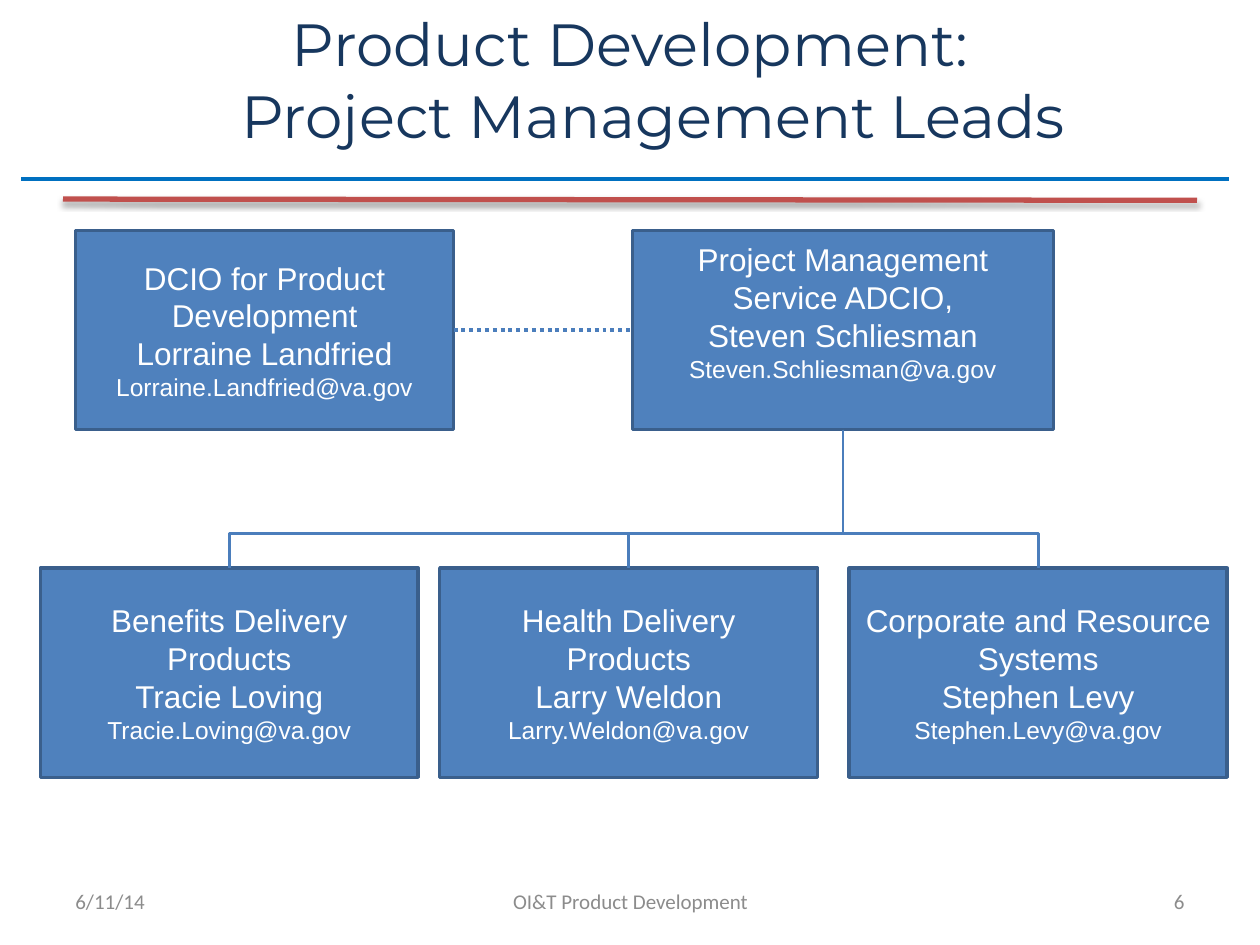
import pptx
import pptx.util
import pptx.dml.color
import pptx.enum.dml
import pptx.enum.shapes
import pptx.enum.text
import pptx.oxml
import pptx.oxml.ns

Inches = pptx.util.Inches
Pt = pptx.util.Pt
RGBColor = pptx.dml.color.RGBColor
Align = pptx.enum.text.PP_ALIGN
Connector = pptx.enum.shapes.MSO_CONNECTOR
qn = pptx.oxml.ns.qn

NAVY = RGBColor(0x17, 0x37, 0x5E)
GRAY = RGBColor(0x8C, 0x8C, 0x8C)
WHITE = RGBColor(0xFF, 0xFF, 0xFF)
BOX_FILL = RGBColor(0x4F, 0x81, 0xBD)
BOX_EDGE = RGBColor(0x3A, 0x5F, 0x8C)
LINK_BLUE = RGBColor(0x4B, 0x7E, 0xBC)
RULE_BLUE = RGBColor(0x00, 0x70, 0xC0)
RULE_RED = RGBColor(0xC0, 0x50, 0x4D)

SHADOW = (
    '<a:outerShdw blurRad="40000" dist="23000" dir="5400000" rotWithShape="0">'
    '<a:srgbClr val="000000"><a:alpha val="35000"/></a:srgbClr></a:outerShdw>'
)


class OrgChart:
    """Draws the titles, boxes and links of an organisation chart on one slide."""

    def __init__(self, slide):
        self.slide = slide
        self.shapes = slide.shapes

    def set_lines(self, frame, lines, font, color, align):
        frame.word_wrap = True
        frame.vertical_anchor = pptx.enum.text.MSO_ANCHOR.MIDDLE
        for index, (text, size) in enumerate(lines):
            paragraph = frame.paragraphs[0] if index == 0 else frame.add_paragraph()
            paragraph.text = text
            paragraph.alignment = align
            paragraph.font.name = font
            paragraph.font.size = Pt(size)
            paragraph.font.color.rgb = color

    def label(self, left, top, width, height, lines, font, color, align):
        frame = self.shapes.add_textbox(
            Inches(left), Inches(top), Inches(width), Inches(height)).text_frame
        self.set_lines(frame, lines, font, color, align)
        return frame

    def box(self, left, top, width, height, role, person, email):
        box = self.shapes.add_shape(
            pptx.enum.shapes.MSO_SHAPE.RECTANGLE,
            Inches(left), Inches(top), Inches(width), Inches(height))
        box.shadow.inherit = False
        box.fill.solid()
        box.fill.fore_color.rgb = BOX_FILL
        box.line.color.rgb = BOX_EDGE
        box.line.width = Pt(2)
        self.set_lines(box.text_frame, [(role, 18), (person, 18), (email, 14)],
                       "Arial", WHITE, Align.CENTER)
        return box

    def line(self, start, end, color, width, kind=Connector.STRAIGHT, effect=""):
        line = self.shapes.add_connector(
            kind, *(Inches(value) for value in (*start, *end)))
        line.line.color.rgb = color
        line.line.width = Pt(width)
        line._element.spPr.append(pptx.oxml.parse_xml(
            f'<a:effectLst {pptx.oxml.ns.nsdecls("a")}>{effect}</a:effectLst>'))
        return line

    def peer_link(self, first, second):
        link = self.line((0, 0), (0, 0), LINK_BLUE, 2.25)
        link.begin_connect(first, 3)
        link.end_connect(second, 1)
        link.line.dash_style = pptx.enum.dml.MSO_LINE.ROUND_DOT

    def report_link(self, lead, report):
        link = self.line((0, 0), (0, 0), LINK_BLUE, 1.5, Connector.ELBOW)
        link.begin_connect(lead, 2)
        link.end_connect(report, 0)
        start_x, end_x = (box.left + box.width // 2 for box in (lead, report))
        start_y, end_y = lead.top + lead.height, report.top
        drop, reach = end_y - start_y, abs(end_x - start_x)
        properties = link._element.spPr
        frame = properties.find(qn("a:xfrm"))
        frame.attrib.clear()
        link.left = (start_x + end_x - drop) // 2
        link.top = (start_y + end_y - reach) // 2
        link.width, link.height = drop, reach
        if end_x < start_x:
            frame.set("rot", "5400000")
        else:
            frame.set("rot", "16200000")
            frame.set("flipH", "1")
        guides = properties.find(qn("a:prstGeom")).find(qn("a:avLst"))
        guides.append(pptx.oxml.parse_xml(
            f'<a:gd {pptx.oxml.ns.nsdecls("a")} name="adj1" fmla="val 74900"/>'))


def main():
    presentation = pptx.Presentation()
    presentation.slide_width = Inches(10)
    presentation.slide_height = Inches(7.5)
    chart = OrgChart(presentation.slides.add_slide(presentation.slide_layouts[6]))

    chart.line((0.17, 1.42), (9.75, 1.42), RULE_BLUE, 2)
    chart.line((0.5, 1.58), (9.5, 1.59), RULE_RED, 3, effect=SHADOW)

    title = chart.label(
        0.5, 0, 9, 1.25,
        [("Product Development:", 34), ("Project Management Leads", 34)],
        "Montserrat", NAVY, Align.CENTER)
    title.paragraphs[1]._p.get_or_add_pPr().set("marL", str(Inches(0.37)))

    for left, width, text, align in (
        (0.5, 2.33, "6/11/14", Align.LEFT),
        (3.42, 3.17, "OI&T Product Development", Align.CENTER),
        (7.17, 2.33, "6", Align.RIGHT),
    ):
        chart.label(left, 6.95, width, 0.4, [(text, 12)], "Calibri", GRAY, align)

    director = chart.box(0.6, 1.83, 3, 1.58, "DCIO for Product Development",
                         "Lorraine Landfried", "Lorraine.Landfried@va.gov")
    manager = chart.box(5.02, 1.83, 3.34, 1.58, "Project Management Service ADCIO,",
                        "Steven Schliesman", "Steven.Schliesman@va.gov")
    manager.text_frame.margin_bottom = Inches(0.34)
    chart.peer_link(director, manager)

    teams = [
        chart.box(left, 4.51, 3, 1.66, role, person, email)
        for left, role, person, email in (
            (0.32, "Benefits Delivery Products", "Tracie Loving", "Tracie.Loving@va.gov"),
            (3.49, "Health Delivery\vProducts", "Larry Weldon", "Larry.Weldon@va.gov"),
            (6.74, "Corporate and Resource Systems", "Stephen Levy", "Stephen.Levy@va.gov"),
        )
    ]
    for team in teams:
        chart.report_link(manager, team)

    presentation.save("out.pptx")


if __name__ == "__main__":
    main()
